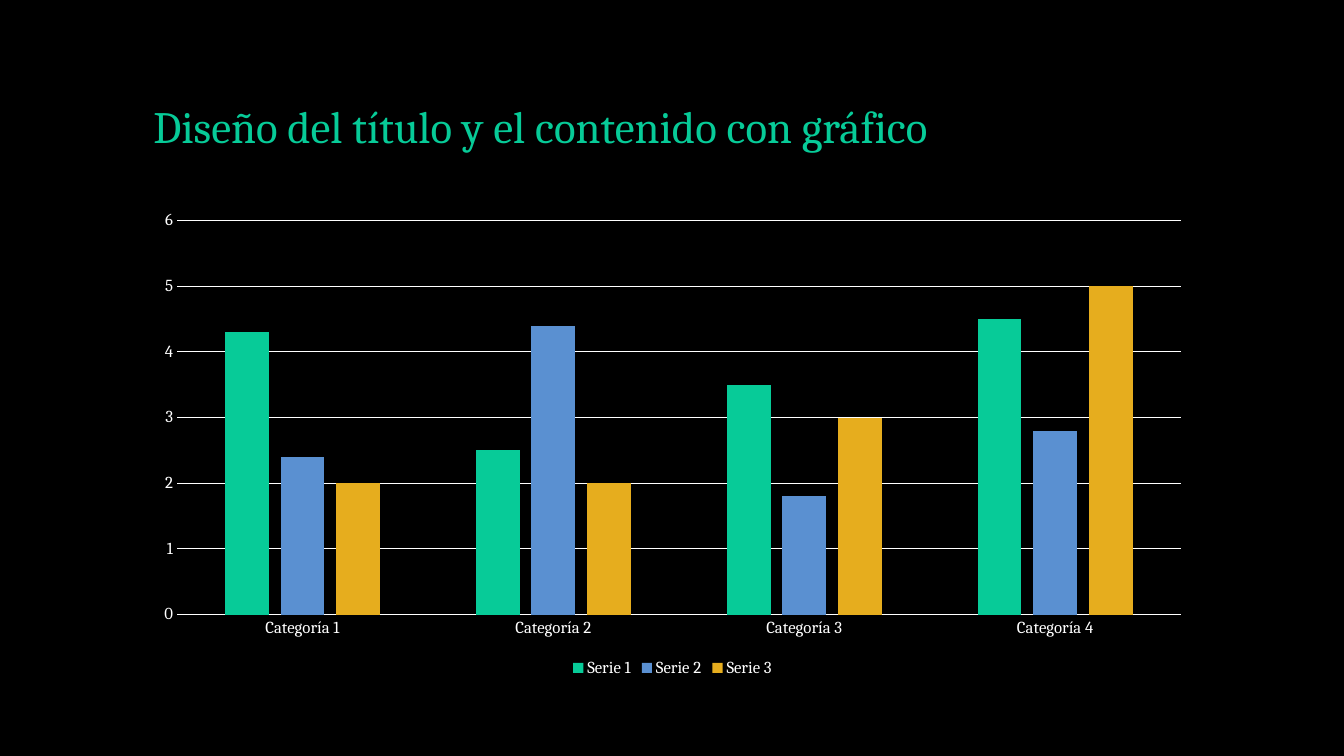
from pptx import Presentation
from pptx.chart.data import CategoryChartData
from pptx.dml.color import RGBColor
from pptx.enum.chart import XL_CHART_TYPE as Kind, XL_LEGEND_POSITION as Legend
from pptx.enum.chart import XL_TICK_MARK as Tick
from pptx.enum.text import MSO_ANCHOR as Anchor, MSO_AUTO_SIZE as Fit, PP_ALIGN as Align
from pptx.util import Inches, Pt

HUES = {"black": "000000", "white": "FFFFFF", "green": "07CB98",
        "blue": "5A90D1", "gold": "E6AD1E"}
FACE = "Cambria"
CATS = [f"Categoría {n}" for n in range(1, 5)]
ROWS = [("Serie 1", "green", (4.3, 2.5, 3.5, 4.5)),
        ("Serie 2", "blue", (2.4, 4.4, 1.8, 2.8)),
        ("Serie 3", "gold", (2, 2, 3, 5))]


class Page:
    def __init__(self, slide):
        self.slide = slide
        self.paint(slide.background.fill, "black")

    def paint(self, fill, hue):
        fill.solid()
        fill.fore_color.rgb = RGBColor.from_string(HUES[hue])

    def style(self, font, size, hue):
        font.name = FACE
        font.size = Pt(size)
        font.bold = False
        font.color.rgb = RGBColor.from_string(HUES[hue])

    def rule(self, line):
        self.paint(line.fill, "white")
        line.width = Pt(0.75)

    def title(self, text, box):
        shape = self.slide.shapes.title
        shape.left, shape.top, shape.width, shape.height = map(Inches, box)
        frame = shape.text_frame
        frame.text = text
        frame.word_wrap = True
        frame.auto_size = Fit.NONE
        frame.vertical_anchor = Anchor.BOTTOM
        para = frame.paragraphs[0]
        para.alignment = Align.LEFT
        para.line_spacing = 0.9
        self.style(para.font, 32, "green")

    def chart(self, cats, rows, box):
        data = CategoryChartData()
        data.categories = cats
        for name, _, vals in rows:
            data.add_series(name, vals)
        chart = self.slide.shapes.add_chart(
            Kind.COLUMN_CLUSTERED, *map(Inches, box), data).chart
        chart.has_title = False
        self.style(chart.font, 10, "white")

        plot = chart.plots[0]
        plot.gap_width, plot.overlap = 219, -27
        plot.vary_by_categories = False
        for bar, (_, hue, _) in zip(plot.series, rows):
            self.paint(bar.format.fill, hue)
            bar.invert_if_negative = False

        base, scale = chart.category_axis, chart.value_axis
        for axis in (base, scale):
            axis.major_tick_mark = axis.minor_tick_mark = Tick.NONE
            self.style(axis.tick_labels.font, 12, "white")
        self.rule(base.format.line)
        scale.format.line.fill.background()
        scale.has_major_gridlines = True
        self.rule(scale.major_gridlines.format.line)

        chart.has_legend = True
        chart.legend.position = Legend.BOTTOM
        chart.legend.include_in_layout = False
        self.style(chart.legend.font, 12, "white")


def main():
    deck = Presentation()
    deck.slide_width, deck.slide_height = Inches(13.33), Inches(7.5)
    page = Page(deck.slides.add_slide(deck.slide_layouts[5]))
    page.title("Diseño del título y el contenido con gráfico", (1.42, 0.4, 10.5, 1.17))
    page.chart(CATS, ROWS, (1.42, 2, 10.5, 4.76))
    deck.save("out.pptx")


if __name__ == "__main__":
    main()
